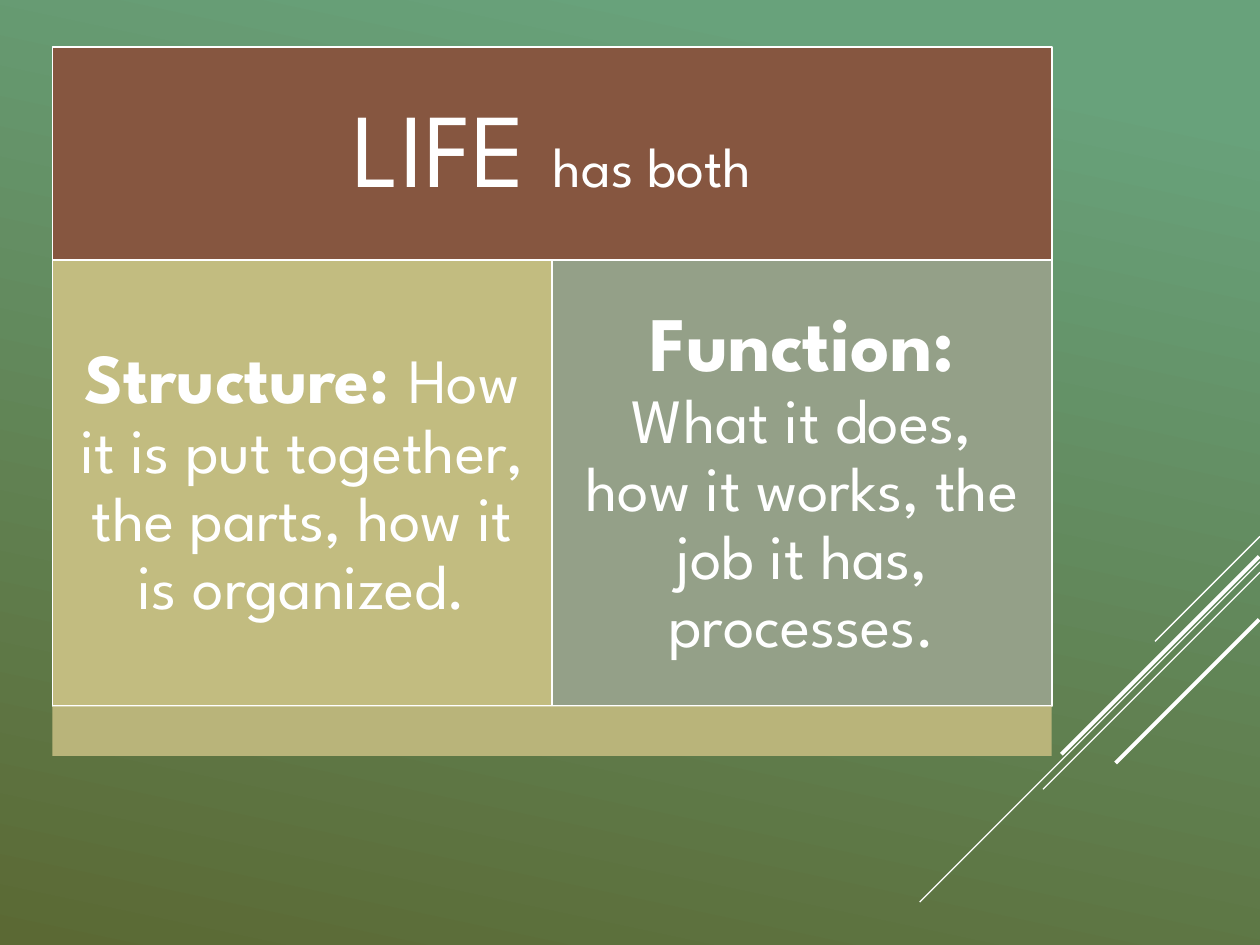
from dataclasses import dataclass

from lxml.etree import SubElement
from pptx import Presentation
from pptx.dml.color import RGBColor
from pptx.enum.shapes import MSO_CONNECTOR, MSO_SHAPE
from pptx.enum.text import MSO_ANCHOR, MSO_AUTO_SIZE, PP_ALIGN
from pptx.oxml.ns import qn
from pptx.util import Pt


@dataclass(frozen=True)
class Theme:
    font: str = "League Spartan"
    white: str = "FFFFFF"
    bg_start: str = "68A27B"
    bg_end: str = "5B6934"
    header: str = "865640"
    structure: str = "C2BC80"
    function: str = "94A088"
    base: str = "B9B47A"
    title_size: float = 60
    subtitle_size: float = 32
    structure_size: float = 40
    function_size: float = 44
    body_size: float = 36
    thin: float = 0.75
    border: float = 1
    thick: float = 2.25


THEME = Theme()


def rgb(value):
    return RGBColor.from_string(value)


def add_rect(s, box, color):
    """Add a plain filled rectangle without outline or shadow."""
    sp = s.shapes.add_shape(MSO_SHAPE.RECTANGLE, *map(Pt, box))
    sp.shadow.inherit = False
    sp.fill.solid()
    sp.fill.fore_color.rgb = rgb(color)
    sp.line.fill.background()
    return sp


def style_panel(sp, color, inset, runs):
    """Fill and outline a panel, then write its (text, size, bold) runs."""
    sp.fill.solid()
    sp.fill.fore_color.rgb = rgb(color)
    sp.line.color.rgb = rgb(THEME.white)
    sp.line.width = Pt(THEME.border)
    tf = sp.text_frame
    tf.word_wrap = True
    tf.auto_size = MSO_AUTO_SIZE.NONE
    tf.vertical_anchor = MSO_ANCHOR.MIDDLE
    tf.margin_left = tf.margin_right = Pt(inset)
    tf.margin_top = tf.margin_bottom = Pt(inset)
    p = tf.paragraphs[0]
    p.alignment = PP_ALIGN.CENTER
    p.line_spacing = 0.9
    p.font.name = THEME.font
    p.font.color.rgb = rgb(THEME.white)
    for text, size, bold in runs:
        r = p.add_run()
        r.text = text
        r.font.size = Pt(size)
        r.font.bold = bold


def paint_background(s):
    fill = s.background.fill
    fill.gradient()
    fill.gradient_angle = 258
    stops = ((0.1, THEME.bg_start), (1, THEME.bg_end))
    for stop, (position, color) in zip(fill.gradient_stops, stops):
        stop.position = position
        stop.color.rgb = rgb(color)


def draw_diagonals(s, box):
    """Draw 45-degree strokes as (right end x, top y, run, width) in the box."""
    left, top, width, _ = box
    right = left + width
    strokes = (
        (0, 0, 60, THEME.thin),
        (0, 14.5, 194.5, THEME.thin),
        (0, 20.5, 124, THEME.thin),
        (0.5, 11.5, 113, THEME.thick),
        (0.5, 47.5, 82, THEME.thick),
    )
    for inset, drop, run, weight in strokes:
        x, y = right - inset, top + drop
        line = s.shapes.add_connector(
            MSO_CONNECTOR.STRAIGHT, Pt(x), Pt(y), Pt(x - run), Pt(y + run))
        line.line.color.rgb = rgb(THEME.white)
        line.line.width = Pt(weight)
        SubElement(line._element.spPr, qn("a:effectLst"))


def draw_diagram(s, box):
    """Stack a title header, two equal columns and a base strip."""
    left, top, width, height = box
    header_h, body_h, base_h = (height * share for share in (0.3, 0.63, 0.07))
    body_top = top + header_h

    # Header
    title = s.shapes.title
    title.left, title.top = Pt(left), Pt(top)
    title.width, title.height = Pt(width), Pt(header_h)
    style_panel(title, THEME.header, 18, (
        ("LIFE ", THEME.title_size, False),
        ("has both", THEME.subtitle_size, False)))

    # Columns
    columns = (
        (THEME.structure, 12.5, "Structure: ", THEME.structure_size,
         "How it is put together, the parts, how it is organized."),
        (THEME.function, 13, "Function: ", THEME.function_size,
         "What it does, how it works, the job it has, processes."),
    )
    column_w = width / len(columns)
    for i, (color, inset, term, size, meaning) in enumerate(columns):
        sp = add_rect(s, (left + i * column_w, body_top, column_w, body_h), color)
        style_panel(sp, color, inset, (
            (term, size, True), (meaning, THEME.body_size, False)))

    # Base strip
    add_rect(s, (left, body_top + body_h, width, base_h), THEME.base)


def main():
    prs = Presentation()
    prs.slide_width, prs.slide_height = Pt(720), Pt(540)
    s = prs.slides.add_slide(prs.slide_layouts[5])
    paint_background(s)
    draw_diagonals(s, (525.5, 306.5, 194.5, 209.5))
    draw_diagram(s, (30, 27, 571, 405))
    prs.save("out.pptx")


if __name__ == "__main__":
    main()
